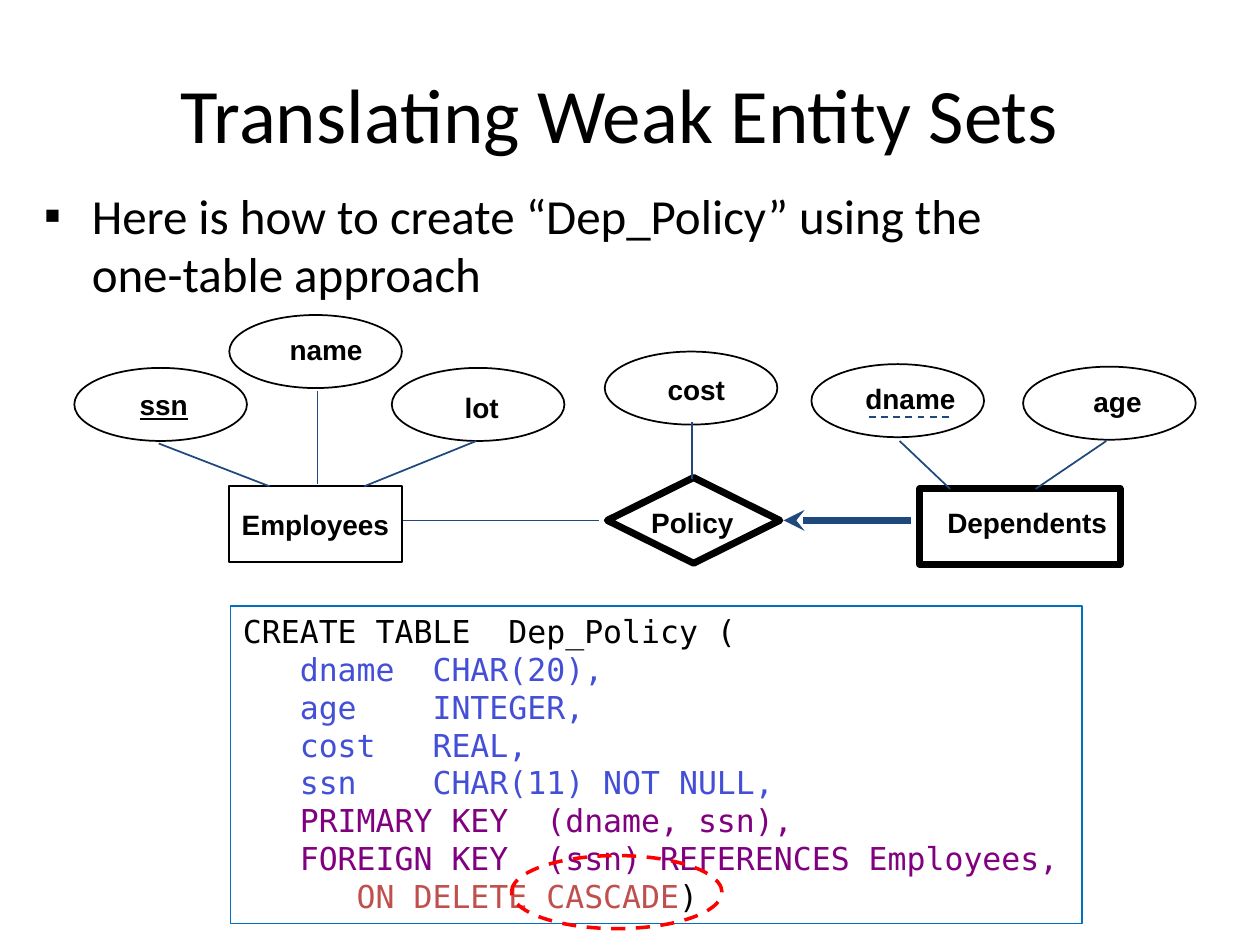
from lxml import etree
from pptx import Presentation
from pptx.dml.color import RGBColor
from pptx.enum.dml import MSO_LINE
from pptx.enum.shapes import MSO_CONNECTOR, MSO_SHAPE
from pptx.enum.text import MSO_ANCHOR, PP_ALIGN
from pptx.oxml.ns import qn
from pptx.util import Inches, Pt

COLORS = {"ink": "000000", "link": "1F497D", "frame": "0070C0", "column": "434FD6",
          "key": "800080", "rule": "C0504D", "mark": "FF0000"}

TITLE = "Translating Weak Entity Sets"
BODY = "Here is how to create “Dep_Policy” using the \vone-table approach"

OVAL = (1.37, 0.58)
OVALS = [(6.44, 2.89), (8.12, 2.91), (0.59, 2.92), (3.11, 2.92), (4.8, 2.79), (1.82, 2.5)]
NODES = [
    (MSO_SHAPE.RECTANGLE, (7.3, 3.88, 1.59, 0.6), 4),
    (MSO_SHAPE.RECTANGLE, (1.82, 3.86, 1.37, 0.6), 1),
    (MSO_SHAPE.DIAMOND, (4.82, 3.79, 1.37, 0.68), 4),
]
LABELS = [
    ("lot", 3.59, 3.05, 0.47), ("name", 2.2, 2.59, 0.78), ("age", 8.58, 3, 0.58),
    ("dname", 6.77, 2.98, 0.91), ("Dependents", 7.42, 3.96, 1.47),
    ("Employees", 1.82, 3.98, 1.37), ("ssn", 1.01, 3.03, 0.58),
    ("Policy", 5.07, 3.96, 0.85), ("cost", 5.2, 2.91, 0.65),
]
LINKS = [
    (2.52, 3.1, 2.52, 3.84), (1.26, 3.52, 2.14, 3.86), (3.78, 3.5, 2.89, 3.86),
    (5.49, 3.8, 5.49, 3.35), (7.14, 3.5, 7.54, 3.88), (8.78, 3.5, 8.22, 3.88),
    (4.75, 4.13, 3.2, 4.13),
]
PARTIAL = (7.53, 3.31, 6.87, 3.31)
ARROW = (6.22, 4.13, 7.23, 4.13)
CODE = [
    [("CREATE TABLE  Dep_Policy (", "ink")],
    [("   dname  CHAR(20),", "column")],
    [("   age    INTEGER,", "column")],
    [("   cost   REAL,", "column")],
    [("   ssn    CHAR(11) NOT NULL,", "column")],
    [("   PRIMARY KEY  (dname, ssn),", "key")],
    [("   FOREIGN KEY  (ssn) REFERENCES Employees,", "key")],
    [("      ON DELETE CASCADE", "rule"), (")", "ink")],
]

deck = Presentation()
deck.slide_width, deck.slide_height = Inches(10), Inches(7.5)
slide = deck.slides.add_slide(deck.slide_layouts[6])


def paint(color):
    return RGBColor.from_string(COLORS[color])


def style(font, color="ink", **values):
    font.color.rgb = paint(color)
    for key, value in values.items():
        setattr(font, key, value)


def stroke(line, color, width, dash=None):
    line.color.rgb = paint(color)
    line.width = Pt(width)
    if dash:
        line.dash_style = dash


def shape(kind, place, color, width, dash=None):
    item = slide.shapes.add_shape(kind, *map(Inches, place))
    item.shadow.inherit = False
    item.fill.background()
    stroke(item.line, color, width, dash)
    return item


def text(words, place, **values):
    frame = slide.shapes.add_textbox(*map(Inches, place)).text_frame
    frame.word_wrap = True
    para = frame.paragraphs[0]
    para.text = words
    for run in para.runs:
        style(run.font, **values)
    return frame, para


def link(ends, width=1, dash=None):
    line = slide.shapes.add_connector(MSO_CONNECTOR.STRAIGHT, *map(Inches, ends))
    stroke(line.line, "link", width, dash)
    etree.SubElement(line._element.spPr, qn("a:effectLst"))
    return line


frame, para = text(TITLE, (0.67, 0.29, 8.5, 1.21), size=Pt(44), name="Calibri")
frame.vertical_anchor = MSO_ANCHOR.MIDDLE
para.alignment = PP_ALIGN.CENTER

frame, para = text(BODY, (0.25, 1.42, 9.58, 1.1), size=Pt(28), name="Calibri")
para.space_before = Pt(5.6)
props = para._p.get_or_add_pPr()
props.set("marL", str(Inches(0.38)))
props.set("indent", str(-Inches(0.38)))
etree.SubElement(props, qn("a:buFont"), typeface="Arial")
etree.SubElement(props, qn("a:buChar"), char="▪")

for spot in OVALS:
    shape(MSO_SHAPE.OVAL, spot + OVAL, "ink", 1)
for kind, place, width in NODES:
    shape(kind, place, "ink", width)
for words, left, top, width in LABELS:
    frame, para = text(words, (left, top, width, 0.36), size=Pt(16), name="Arial",
                       bold=True, underline=words == "ssn")
    frame.margin_right = 0

link(PARTIAL, dash=MSO_LINE.DASH)
for ends in LINKS:
    link(ends)
arrow = link(ARROW, width=4)
etree.SubElement(arrow._element.spPr.find(qn("a:ln")), qn("a:headEnd"), type="stealth")

frame = shape(MSO_SHAPE.RECTANGLE, (1.83, 4.81, 6.76, 2.52), "frame", 1).text_frame
frame.word_wrap = False
frame.vertical_anchor = MSO_ANCHOR.TOP
for index, parts in enumerate(CODE):
    para = frame.add_paragraph() if index else frame.paragraphs[0]
    para.alignment = PP_ALIGN.LEFT
    for words, color in parts:
        run = para.add_run()
        run.text = words
        style(run.font, color, size=Pt(18), name="DejaVu Sans Mono")

shape(MSO_SHAPE.OVAL, (4.06, 6.79, 1.67, 0.58), "mark", 2, MSO_LINE.DASH)

deck.save("out.pptx")
